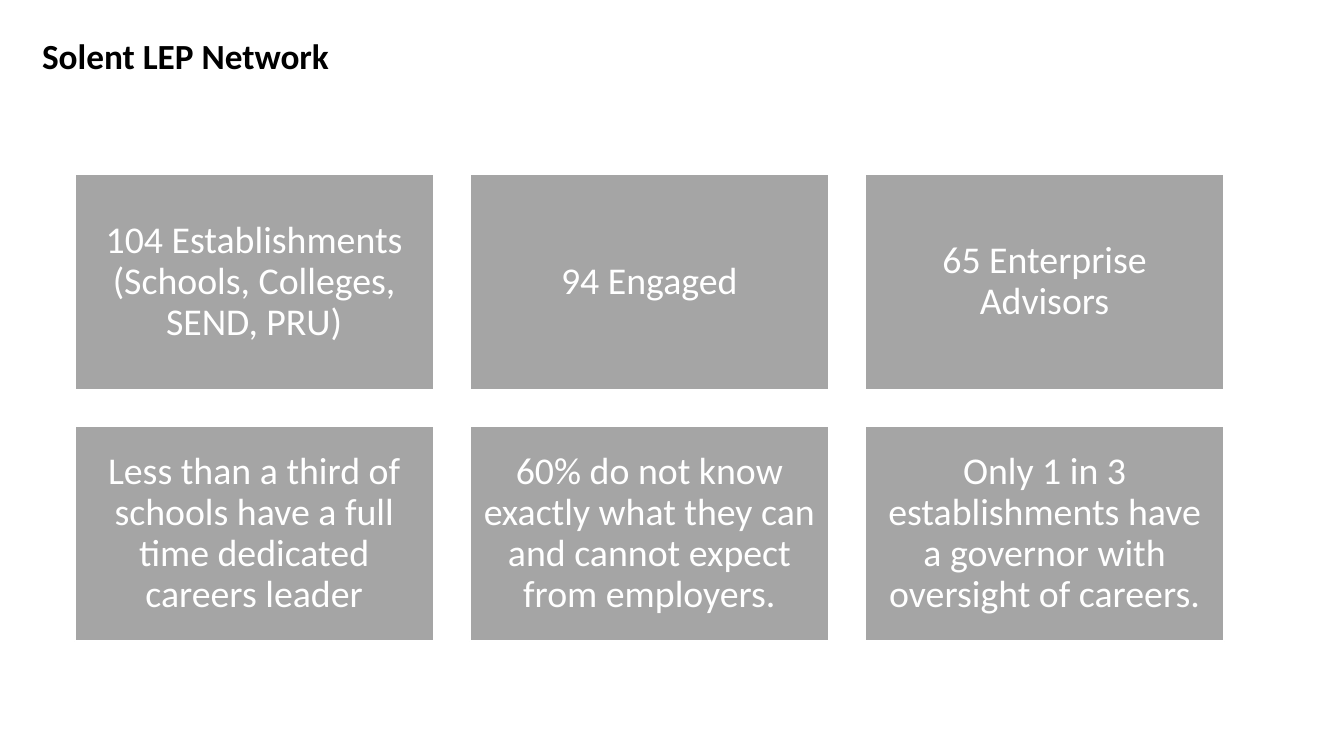
from pptx import Presentation
from pptx.dml.color import RGBColor
from pptx.enum.shapes import MSO_SHAPE as Shape
from pptx.enum.text import MSO_ANCHOR as Anchor, PP_ALIGN as Align
from pptx.util import Cm, Pt

BLACK = RGBColor(0x00, 0x00, 0x00)
WHITE = RGBColor(0xFF, 0xFF, 0xFF)
GREY = RGBColor(0xA5, 0xA5, 0xA5)


def write(frame, text, size, color, bold=False, align=Align.LEFT, inset=None):
    frame.word_wrap = True
    frame.vertical_anchor = Anchor.MIDDLE
    if inset is not None:
        frame.margin_left = frame.margin_right = inset
        frame.margin_top = frame.margin_bottom = inset
    paragraph = frame.paragraphs[0]
    paragraph.alignment = align
    paragraph.line_spacing = 0.9
    run = paragraph.add_run()
    run.text = text
    run.font.name = "Calibri"
    run.font.size = Pt(size)
    run.font.bold = bold
    run.font.color.rgb = color


deck = Presentation()
deck.slide_width, deck.slide_height = Cm(33.87), Cm(19.05)
slide = deck.slides.add_slide(deck.slide_layouts[6])

# Heading
heading = slide.shapes.add_textbox(Cm(0.81), Cm(0.46), Cm(27.28), Cm(2))
write(heading.text_frame, "Solent LEP Network", 25.2, BLACK, bold=True)

# Grid of key facts
facts = [
    ["104 Establishments (Schools, Colleges, SEND, PRU)",
     "94 Engaged",
     "65 Enterprise Advisors"],
    ["Less than a third of schools have a full time dedicated careers leader",
     "60% do not know exactly what they can and cannot expect from employers.",
     "Only 1 in 3 establishments have a governor with oversight of careers."],
]
left, top = 1.88, 4.39
width, height = 9.05, 5.43
gap = 0.91

for row, row_facts in enumerate(facts):
    for column, fact in enumerate(row_facts):
        tile = slide.shapes.add_shape(
            Shape.RECTANGLE,
            Cm(left + column * (width + gap)), Cm(top + row * (height + gap)),
            Cm(width), Cm(height))
        tile.shadow.inherit = False
        tile.fill.solid()
        tile.fill.fore_color.rgb = GREY
        tile.line.color.rgb = WHITE
        tile.line.width = Pt(1.5)
        write(tile.text_frame, fact, 27, WHITE, align=Align.CENTER, inset=Cm(0.28))

deck.save("out.pptx")
